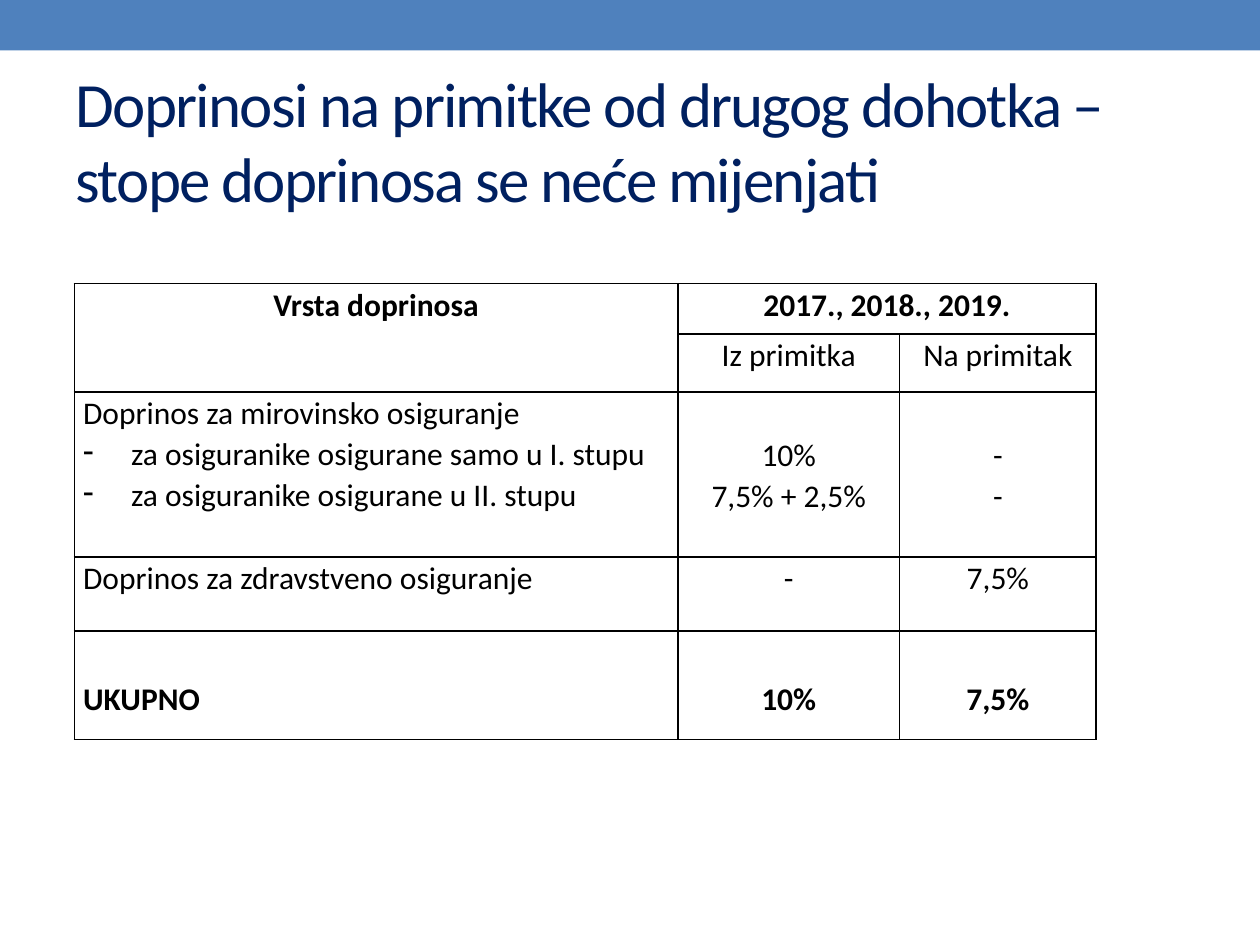
from dataclasses import dataclass

from pptx import Presentation
from pptx.dml.color import RGBColor
from pptx.enum.shapes import MSO_SHAPE
from pptx.enum.text import MSO_ANCHOR, PP_ALIGN
from pptx.oxml import parse_xml
from pptx.oxml.ns import nsdecls
from pptx.util import Inches, Pt

FONT = "Calibri"
BLUE, NAVY, BLACK = "4F81BD", "002060", "000000"
COLS = [4.79, 1.76, 1.56]
ROWS = [0.4, 0.46, 1.31, 0.59, 0.86]
HEAD_LINE, TOTAL_DROP = 0.33, 0.39  # drop below the top of a cell


@dataclass
class CellText:
    row: int
    col: int
    lines: list[str]
    bold: bool = False
    top: float = 0
    dashed_from: int = 99  # index of the first line with a dash bullet


CELLS = [
    CellText(0, 0, ["Vrsta doprinosa"], bold=True),
    CellText(0, 1, ["2017., 2018., 2019."], bold=True),
    CellText(1, 1, ["Iz primitka"]),
    CellText(1, 2, ["Na primitak"]),
    CellText(2, 0, ["Doprinos za mirovinsko osiguranje",
                    "za osiguranike osigurane samo u I. stupu",
                    "za osiguranike osigurane u II. stupu"], dashed_from=1),
    CellText(2, 1, ["10%", "7,5% + 2,5%"], top=HEAD_LINE),
    CellText(2, 2, ["-", "-"], top=HEAD_LINE),
    CellText(3, 0, ["Doprinos za zdravstveno osiguranje"]),
    CellText(3, 1, ["-"]),
    CellText(3, 2, ["7,5%"]),
    CellText(4, 0, ["UKUPNO"], bold=True, top=TOTAL_DROP),
    CellText(4, 1, ["10%"], bold=True, top=TOTAL_DROP),
    CellText(4, 2, ["7,5%"], bold=True, top=TOTAL_DROP),
]


def rgb(value: str) -> RGBColor:
    return RGBColor.from_string(value)


def add_run(p, text: str, size: float, color: str, bold: bool = False):
    r = p.add_run()
    r.text = text
    r.font.name, r.font.size, r.font.bold = FONT, Pt(size), bold
    r.font.color.rgb = rgb(color)
    return r


def add_bar(slide) -> None:
    sp = slide.shapes.add_shape(MSO_SHAPE.RECTANGLE, 0, 0, Inches(10), Inches(0.4))
    sp.shadow.inherit = False
    sp.fill.solid()
    sp.fill.fore_color.rgb = rgb(BLUE)
    sp.line.fill.background()


def set_title(slide, lines: list[str]) -> None:
    title = slide.shapes.title
    title.left, title.top = Inches(0.5), Inches(0.58)
    title.width, title.height = Inches(9), Inches(1.67)
    tf = title.text_frame
    tf.word_wrap = True
    tf.vertical_anchor = MSO_ANCHOR.MIDDLE
    tf.margin_bottom = Inches(0.66)
    p = tf.paragraphs[0]
    p.alignment = PP_ALIGN.LEFT
    for i, line in enumerate(lines):
        if i:
            p.add_line_break()
        r = add_run(p, line, 36, NAVY)
        r.font._element.set("spc", "-100")


def style_cell(cell) -> None:
    """Thin black borders, no fill and narrow margins."""
    tc_pr = cell._tc.get_or_add_tcPr()
    for side in "LRTB":
        tc_pr.append(parse_xml(
            f'<a:ln{side} {nsdecls("a")} w="{Pt(1)}"><a:solidFill>'
            f'<a:srgbClr val="{BLACK}"/></a:solidFill></a:ln{side}>'))
    cell.fill.background()
    cell.margin_left = cell.margin_right = Inches(0.07)
    cell.margin_top = cell.margin_bottom = 0


def add_dash(p) -> None:
    p_pr = p._p.get_or_add_pPr()
    p_pr.set("marL", str(Inches(0.38)))
    p_pr.set("indent", str(-Inches(0.38)))
    p_pr.append(parse_xml(f'<a:buChar {nsdecls("a")} char="-"/>'))


def fill_cell(cell, item: CellText) -> None:
    cell.margin_top = Inches(item.top)
    tf = cell.text_frame
    centred = item.col > 0 or item.row == 0
    for i, line in enumerate(item.lines):
        p = tf.add_paragraph() if i else tf.paragraphs[0]
        if i >= item.dashed_from:
            add_dash(p)
            p.alignment = PP_ALIGN.JUSTIFY
        else:
            p.alignment = PP_ALIGN.CENTER if centred else PP_ALIGN.LEFT
        p.line_spacing = 1.0 if item.row == 4 else 1.07
        add_run(p, line, 18, BLACK, item.bold)


def add_rates_table(slide) -> None:
    table = slide.shapes.add_table(
        len(ROWS), len(COLS), Inches(0.59), Inches(2.25),
        Inches(sum(COLS)), Inches(sum(ROWS))).table
    table.first_row = table.horz_banding = False
    for col, width in zip(table.columns, COLS):
        col.width = Inches(width)
    for row, height in zip(table.rows, ROWS):
        row.height = Inches(height)
    for cell in table.iter_cells():
        style_cell(cell)
    table.cell(0, 0).merge(table.cell(1, 0))
    table.cell(0, 1).merge(table.cell(0, 2))
    for item in CELLS:
        fill_cell(table.cell(item.row, item.col), item)


def main() -> None:
    prs = Presentation()
    prs.slide_width, prs.slide_height = Inches(10), Inches(7.5)
    slide = prs.slides.add_slide(prs.slide_layouts[5])
    add_bar(slide)
    set_title(slide, ["Doprinosi na primitke od drugog dohotka –",
                      "stope doprinosa se neće mijenjati"])
    add_rates_table(slide)
    prs.save("out.pptx")


if __name__ == "__main__":
    main()
